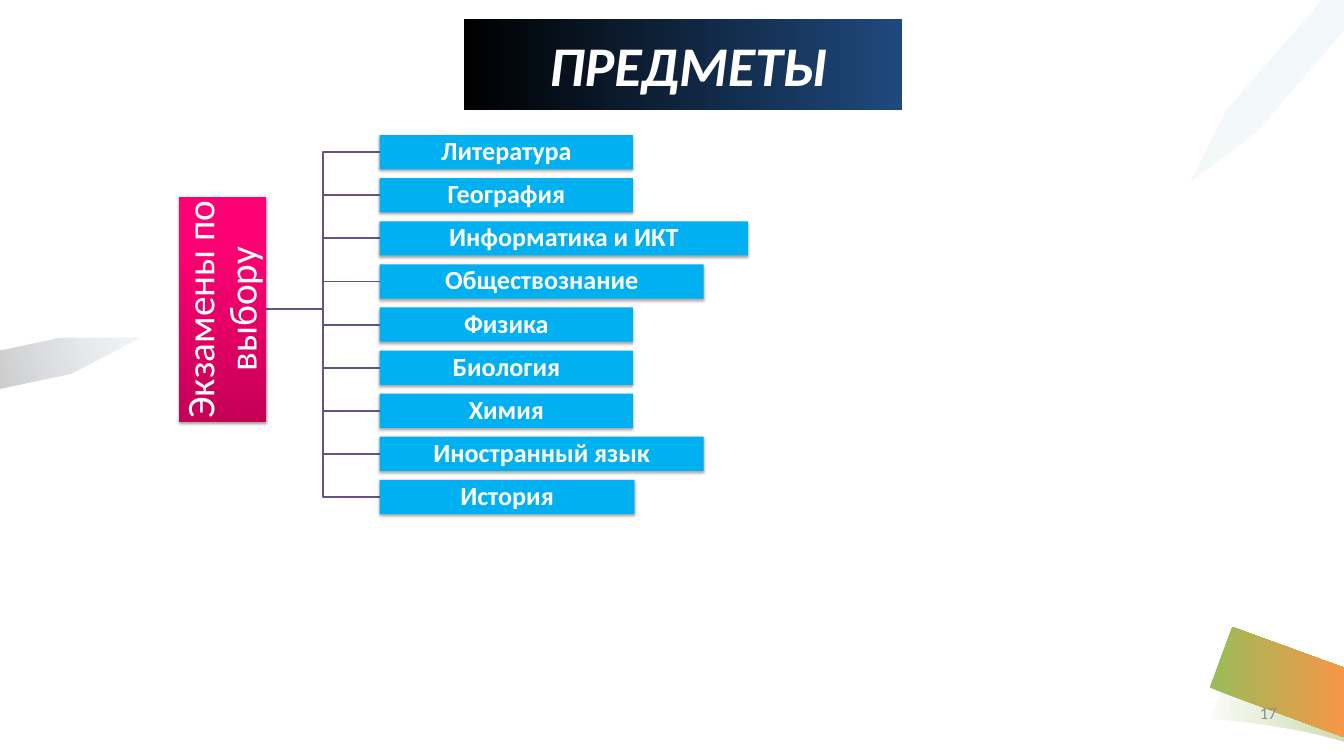
from dataclasses import dataclass

from lxml import etree
from pptx import Presentation, util as u
from pptx.dml.color import RGBColor
from pptx.enum import shapes, text
from pptx.oxml.ns import qn

CELL = u.Inches(0.25)  # the slide is a grid of 80 columns by 45 rows
COLUMNS, ROWS = 80, 45


@dataclass(frozen=True)
class Theme:
    font: str = "Calibri"
    white: str = "FFFFFF"
    black: str = "000000"
    navy: str = "1F497D"
    green: str = "9BBB59"
    orange: str = "F79646"
    teal: str = "4BACC6"
    sand: str = "EEECE1"
    sky: str = "00B0F0"
    pinks: tuple = ("C50057", "FF0074", "FF0075")
    branch: str = "675082"
    grey: str = "8C8C8C"
    title_size: int = 60
    root_size: int = 42
    subject_size: int = 28
    number_size: int = 18
    line_width: int = 2


THEME = Theme()

STANDARD, MEDIUM, WIDE = 15.08, 19.28, 21.92
SUBJECTS = [
    ("Литература", STANDARD),
    ("География", STANDARD),
    ("Информатика и ИКТ", WIDE),
    ("Обществознание", MEDIUM),
    ("Физика", STANDARD),
    ("Биология", STANDARD),
    ("Химия", STANDARD),
    ("Иностранный язык", MEDIUM),
    ("История", 15.16),
]


def grid(*values):
    return [u.Emu(round(value * CELL)) for value in values]


def set_gradient(shape, stops, angle):
    """Stops are (position %, colour, opacity %); the angle runs clockwise."""
    shape.fill.gradient()
    gradient = shape._element.spPr.find(qn("a:gradFill"))
    gradient.set("rotWithShape", "0")
    for child in list(gradient):
        gradient.remove(child)
    stop_list = etree.SubElement(gradient, qn("a:gsLst"))
    for position, color, opacity in stops:
        stop = etree.SubElement(stop_list, qn("a:gs"), pos=str(position * 1000))
        rgb = etree.SubElement(stop, qn("a:srgbClr"), val=color)
        etree.SubElement(rgb, qn("a:alpha"), val=str(opacity * 1000))
    etree.SubElement(gradient, qn("a:lin"), ang=str(angle * 60000), scaled="0")


def add_shadow(shape):
    effects = shape._element.spPr.find(qn("a:effectLst"))
    shadow = etree.SubElement(
        effects, qn("a:outerShdw"), blurRad=str(u.Pt(3.1)), dist=str(u.Pt(1.8)),
        dir="5400000", rotWithShape="0")
    rgb = etree.SubElement(shadow, qn("a:srgbClr"), val=THEME.black)
    etree.SubElement(rgb, qn("a:alpha"), val="35000")


def add_rectangle(slide, box):
    shape = slide.shapes.add_shape(shapes.MSO_SHAPE.RECTANGLE, *grid(*box))
    shape.shadow.inherit = False
    shape.line.fill.background()
    return shape


def write_text(shape, words, size, color, inset=0.0, align=text.PP_ALIGN.CENTER):
    frame = shape.text_frame
    frame.word_wrap = True
    frame.margin_left = frame.margin_right = u.Inches(inset)
    frame.margin_top = frame.margin_bottom = u.Inches(inset)
    paragraph = frame.paragraphs[0]
    paragraph.text = words
    paragraph.alignment = align
    paragraph.font.name = THEME.font
    paragraph.font.size = u.Pt(size)
    paragraph.font.color.rgb = RGBColor.from_string(color)
    return paragraph


def add_outline(slide, points, close):
    start, *rest = [grid(*point) for point in points]
    builder = slide.shapes.build_freeform(*start)
    builder.add_line_segments(rest, close=close)
    shape = builder.convert_to_shape()
    shape.shadow.inherit = False
    return shape


def curve(start, first, second, end, steps=12):
    """Points along a cubic Bezier curve, both ends included."""
    points = []
    for step in range(steps + 1):
        t = step / steps
        weights = (1 - t) ** 3, 3 * t * (1 - t) ** 2, 3 * t * t * (1 - t), t ** 3
        points.append(tuple(
            sum(weight * value for weight, value in zip(weights, axis))
            for axis in zip(start, first, second, end)))
    return points


def add_ornament(slide, box, shares, stops, angle):
    left, top, width, height = box
    points = [(left + x * width, top + y * height) for x, y in shares]
    shape = add_outline(slide, points, close=True)
    set_gradient(shape, stops, angle)
    shape.line.fill.background()


def add_background(slide):
    curl = (curve((0, 0.73), (0, 0.73), (0.58, 0.79), (1, 1))
            + curve((1, 0.2), (0.53, -0.01), (0.17, 0.01), (0.17, 0.01)))
    add_ornament(slide, (72.12, 39.08, 7.88, 5.04), curl,
                 [(3, THEME.green, 6), (100, THEME.green, 50)], 0)
    add_ornament(slide, (72, 37.32, 8, 6.56),
                 [(1, 0.37), (0.17, 0), (0, 0.55), (1, 1)],
                 [(3, THEME.green, 100), (100, THEME.orange, 100)], 0)
    add_ornament(slide, (0, 20.12, 8.44, 3),
                 [(1, 0), (0.41, 0.01), (0, 0.25), (0, 1), (0.5, 0.71)],
                 [(0, THEME.navy, 5), (100, THEME.black, 20)], 164)
    add_ornament(slide, (70.88, 0, 9.08, 10.8),
                 [(0.86, 0), (0.23, 0.61), (0, 1), (0.44, 0.72), (1, 0.17), (1, 0)],
                 [(0, THEME.teal, 5), (100, THEME.sand, 20)], 53)


def add_page_number(slide, box):
    shape = slide.shapes.add_textbox(*grid(*box))
    write_text(shape, "17", THEME.number_size, THEME.grey, align=text.PP_ALIGN.RIGHT)


def add_title(slide, box):
    shape = add_rectangle(slide, box)
    set_gradient(shape, [(0, THEME.navy, 100), (100, THEME.black, 100)], 180)
    paragraph = write_text(shape, "ПРЕДМЕТЫ", THEME.title_size, THEME.white)
    paragraph.font.bold = paragraph.font.italic = True
    shape.text_frame.margin_left = u.Inches(0.16)


def add_subject_tree(slide, box):
    """A sideways root on the left, branching to a column of subject bars."""
    left, top, _, height = box
    root_width, root_length, bar_height = 5.2, 13.4, 2.04
    root_right, root_middle = left + root_width, top + 0.46 * height
    bar_left = left + 11.94
    fork = (root_right + bar_left) / 2
    pitch = (height - bar_height) / (len(SUBJECTS) - 1)
    bar_tops = [top + row * pitch for row in range(len(SUBJECTS))]

    for bar_top in reversed(bar_tops):
        middle = bar_top + bar_height / 2
        branch = add_outline(slide, [(root_right, root_middle), (fork, root_middle),
                                     (fork, middle), (bar_left, middle)], close=False)
        branch.fill.background()
        branch.line.color.rgb = RGBColor.from_string(THEME.branch)
        branch.line.width = u.Pt(THEME.line_width)

    root = add_rectangle(slide, (left + (root_width - root_length) / 2,
                                 root_middle - root_width / 2, root_length, root_width))
    root.rotation = 270
    set_gradient(root, [(position, color, 100) for position, color
                        in zip((0, 80, 100), THEME.pinks)], 270)
    add_shadow(root)
    write_text(root, "Экзамены по выбору", THEME.root_size, THEME.white,
               0.03).line_spacing = 0.9

    for (subject, width), bar_top in zip(SUBJECTS, bar_tops):
        bar = add_rectangle(slide, (bar_left, bar_top, width, bar_height))
        bar.fill.solid()
        bar.fill.fore_color.rgb = RGBColor.from_string(THEME.sky)
        add_shadow(bar)
        paragraph = write_text(bar, subject, THEME.subject_size, THEME.white, 0.02)
        paragraph.line_spacing = 0.9
        paragraph.font.bold = True


def main():
    presentation = Presentation()
    presentation.slide_width, presentation.slide_height = grid(COLUMNS, ROWS)
    slide = presentation.slides.add_slide(presentation.slide_layouts[6])
    add_background(slide)
    add_page_number(slide, (57.6, 41.84, 18.4, 1.2))
    add_title(slide, (27.64, 1.12, 26.04, 5.44))
    add_subject_tree(slide, (10.66, 8.04, 33.86, 22.56))
    presentation.save("out.pptx")


if __name__ == "__main__":
    main()
